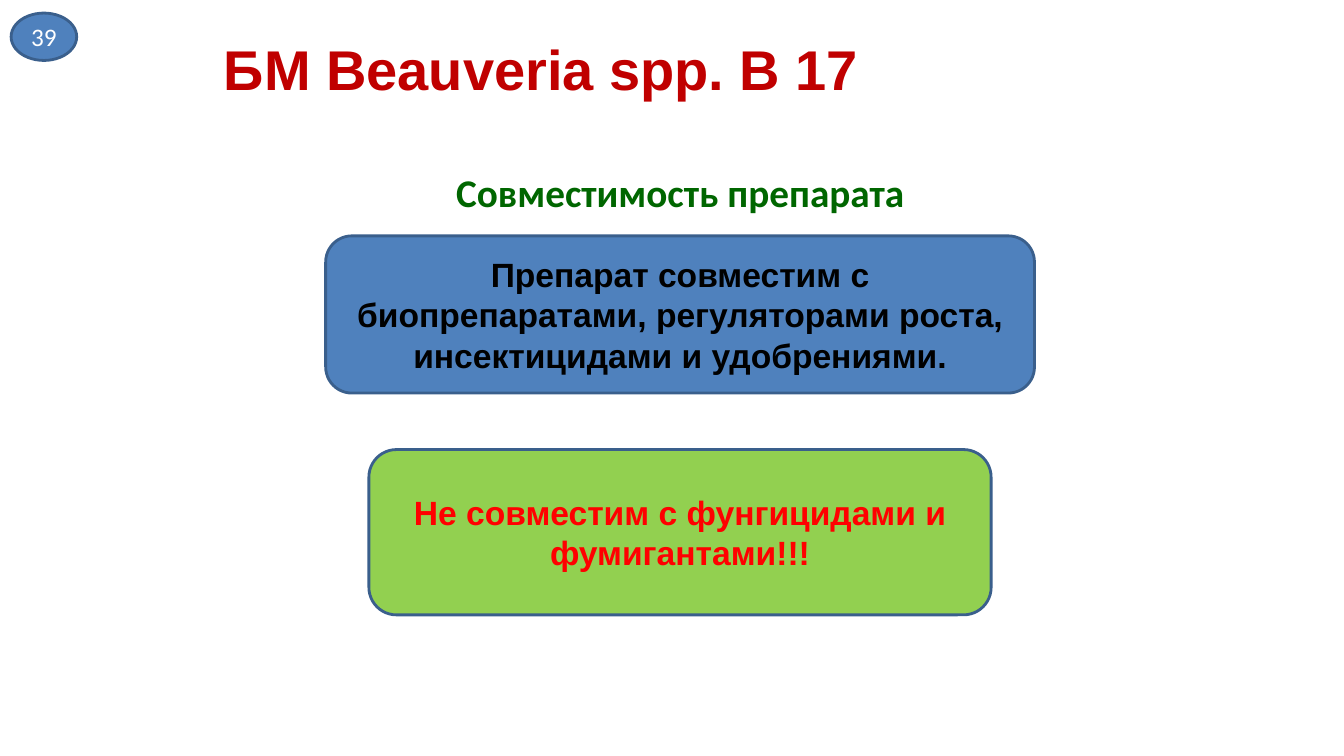
from pptx import Presentation
from pptx.dml.color import RGBColor
from pptx.enum.shapes import MSO_SHAPE
from pptx.enum.text import MSO_ANCHOR, MSO_AUTO_SIZE, PP_ALIGN
from pptx.util import Inches, Pt

WIDTH, HEIGHT = Inches(13.33), Inches(7.5)
COL, ROW = WIDTH / 100, HEIGHT / 100
MID = 50.6
COLORS = {
    "blue": "4F81BD", "edge": "3A5F8C", "lime": "92D050", "red": "FF0000",
    "title": "C00000", "green": "006600", "black": "000000", "white": "FFFFFF",
}


def color(name):
    """Return the named colour."""
    return RGBColor.from_string(COLORS[name])


def grid(left, top, width, height):
    """Turn grid columns and rows into slide lengths."""
    return int(left * COL), int(top * ROW), int(width * COL), int(height * ROW)


def center(top, width, height):
    """Return a box centred on the content axis."""
    return grid(MID - width / 2, top, width, height)


def write(shape, text, size, ink, font="Arial", bold=True, anchor=MSO_ANCHOR.MIDDLE, wrap=True):
    """Put one centred, styled paragraph into a shape."""
    frame = shape.text_frame
    frame.text = text
    frame.word_wrap = wrap
    frame.auto_size = MSO_AUTO_SIZE.NONE
    frame.vertical_anchor = anchor
    line = frame.paragraphs[0]
    line.alignment = PP_ALIGN.CENTER
    font_style = line.runs[0].font
    font_style.name, font_style.size, font_style.bold = font, Pt(size), bold
    font_style.color.rgb = color(ink)


def panel(slide, kind, box, fill):
    """Draw an outlined shape in the given box."""
    shape = slide.shapes.add_shape(kind, *box)
    shape.shadow.inherit = False
    shape.fill.solid()
    shape.fill.fore_color.rgb = color(fill)
    shape.line.color.rgb = color("edge")
    shape.line.width = Pt(2)
    return shape


def head(slide, box, text):
    """Place the slide title."""
    title = slide.shapes.title
    title.left, title.top, title.width, title.height = box
    write(title, text, 40, "title", anchor=MSO_ANCHOR.TOP)


def topic(slide, box, text):
    """Place the heading above the cards."""
    label = slide.shapes.add_textbox(*box)
    write(label, text, 28, "green", "Calibri", anchor=MSO_ANCHOR.TOP)


def card(slide, box, text, fill, ink):
    """Place a rounded card with its message."""
    write(panel(slide, MSO_SHAPE.ROUNDED_RECTANGLE, box, fill), text, 24, ink)


def badge(slide, box, text):
    """Place the oval page number."""
    oval = panel(slide, MSO_SHAPE.OVAL, box, "blue")
    write(oval, text, 18, "white", "Calibri", bold=False, wrap=False)


def main():
    """Build and save the slide."""
    deck = Presentation()
    deck.slide_width, deck.slide_height = WIDTH, HEIGHT
    slide = deck.slides.add_slide(deck.slide_layouts[5])
    topic(slide, center(21.6, 69.7, 34.1), "Совместимость препарата")
    head(slide, grid(15.15, 3.87, 50.2, 10.27), "БМ Beauveria spp. B 17")
    card(slide, center(31.2, 52.74, 20.8),
         "Препарат совместим с биопрепаратами, регуляторами роста, "
         "инсектицидами и удобрениями.", "blue", "black")
    card(slide, center(59.47, 46.3, 21.87),
         "Не совместим с фунгицидами и фумигантами!!!", "lime", "red")
    badge(slide, grid(0.83, 1.73, 4.88, 6.27), "39")
    deck.save("out.pptx")


if __name__ == "__main__":
    main()
